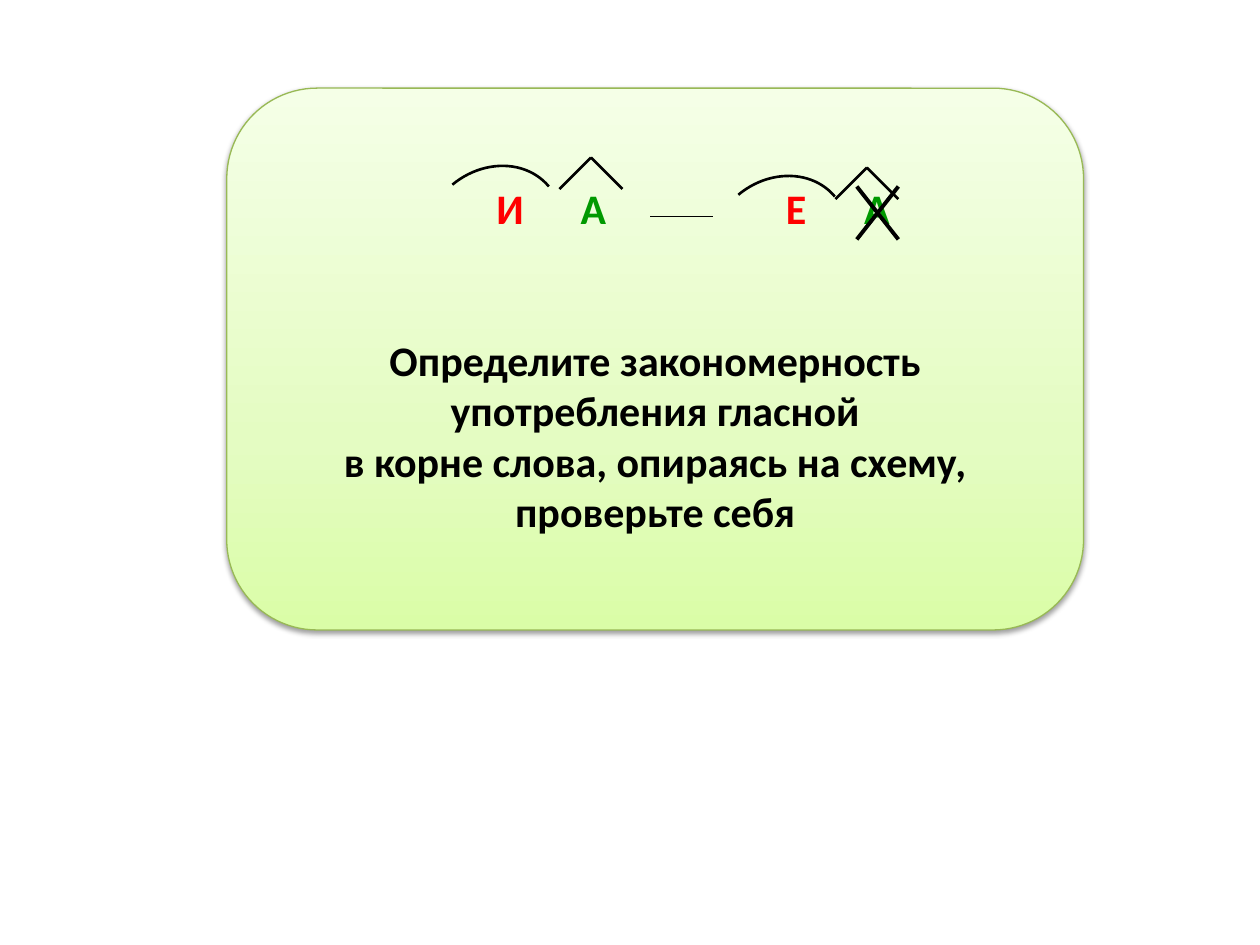
from copy import deepcopy
from lxml.etree import SubElement as Sub
from pptx import Presentation
from pptx.dml.color import RGBColor
from pptx.enum.shapes import MSO_CONNECTOR, MSO_SHAPE
from pptx.enum.text import MSO_ANCHOR, PP_ALIGN
from pptx.oxml.ns import qn
from pptx.util import Inches, Pt

BLACK = RGBColor(0, 0, 0)
RED = RGBColor(0xFF, 0, 0)
GREEN = RGBColor(0, 0x99, 0)
EDGE = RGBColor(0x98, 0xB9, 0x55)
SHADES = [(0, RGBColor(0xDA, 0xFD, 0xA7)),
          (0.35, RGBColor(0xE4, 0xFC, 0xC2)),
          (1, RGBColor(0xF5, 0xFF, 0xE7))]

deck = Presentation()
deck.slide_width, deck.slide_height = Inches(10), Inches(7.5)
CELL = deck.slide_width / 100  # the slide is a grid of 100 by 75 cells
slide = deck.slides.add_slide(deck.slide_layouts[6])
shapes = slide.shapes


def grid(*cells):
    return [round(n * CELL) for n in cells]


def stroke(x1, y1, x2, y2, width):
    line = shapes.add_connector(MSO_CONNECTOR.STRAIGHT, *grid(x1, y1, x2, y2))
    line.line.color.rgb = BLACK
    line.line.width = Pt(width)
    Sub(line._element.spPr, qn("a:effectLst"))


# Card
card = shapes.add_shape(MSO_SHAPE.ROUNDED_RECTANGLE, *grid(18, 7, 68, 43))
card.adjustments[0] = 0.167
card.line.color.rgb = EDGE
card.line.width = Pt(0.75)
card.fill.gradient()
card.fill.gradient_angle = 90
props = card._element.spPr
stops = props.find(".//" + qn("a:gsLst"))
stops.append(deepcopy(stops[0]))
for stop, (place, color) in zip(card.fill.gradient_stops, SHADES):
    stop.position = place
    stop.color.rgb = color

card.shadow.inherit = False
shade = Sub(props.find(qn("a:effectLst")), qn("a:outerShdw"),
            blurRad=str(Pt(3.1)), dist=str(Pt(1.6)), dir="5400000", rotWithShape="0")
tint = Sub(shade, qn("a:srgbClr"), val=str(BLACK))
Sub(tint, qn("a:alpha"), val="38000")

# Text: the letters stand on centred tab stops, the task below them
LETTERS = [("И", RED, 40.5), ("А", GREEN, 47.1), ("Е", RED, 63.2), ("А", GREEN, 69.6)]
TASK = ["Определите закономерность", "употребления гласной",
        "в корне слова, опираясь на схему,", "проверьте себя"]
TEXT_LEFT = 21.1

frame = card.text_frame
frame.word_wrap = True
frame.vertical_anchor = MSO_ANCHOR.MIDDLE
row = frame.paragraphs[0]
row.alignment = PP_ALIGN.LEFT
row.space_after = Pt(58)
tabs = Sub(row._p.get_or_add_pPr(), qn("a:tabLst"))
parts = [(row, "\t" + letter, color) for letter, color, _ in LETTERS]
for _, _, x in LETTERS:
    Sub(tabs, qn("a:tab"), pos=str(grid(x - TEXT_LEFT)[0]), algn="ctr")
for words in TASK:
    para = frame.add_paragraph()
    para.alignment = PP_ALIGN.CENTER
    parts.append((para, words, BLACK))
for para, words, color in parts:
    run = para.add_run()
    run.text = words
    run.font.name = "Calibri"
    run.font.size = Pt(24)
    run.font.bold = True
    run.font.color.rgb = color

# Root arcs, each a quarter of an ellipse around its centre
for x, y in [(39.1, 18.5), (61.8, 19.3)]:
    arc = shapes.add_shape(MSO_SHAPE.ARC, *grid(x - 5.8, y - 5, 11.6, 10))
    arc.rotation = 320.3
    arc.shadow.inherit = False
    arc.fill.background()
    arc.line.color.rgb = BLACK
    arc.line.width = Pt(1.5)

# Suffix roofs
for x, y in [(46.9, 12.5), (68.8, 13.3)]:
    for side in (-2.5, 2.5):
        stroke(x + side, y + 2.5, x, y, 1.5)

# Dash between the schemes, then the cross over the last letter
stroke(51.6, 17.2, 56.6, 17.2, 0.75)
stroke(68, 14.8, 71.3, 19, 2.25)
stroke(71.3, 14.8, 68, 19, 2.25)

deck.save("out.pptx")
